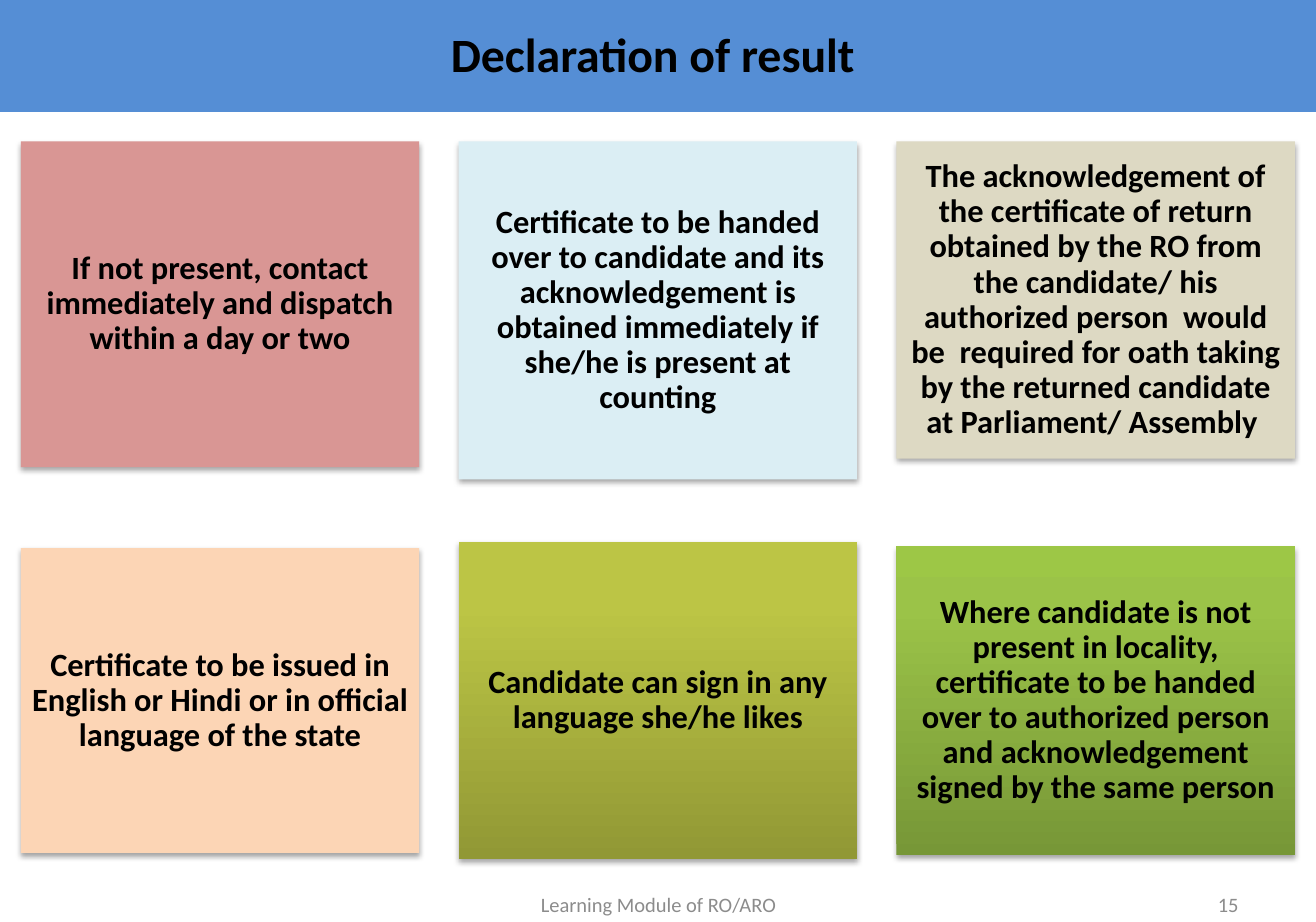
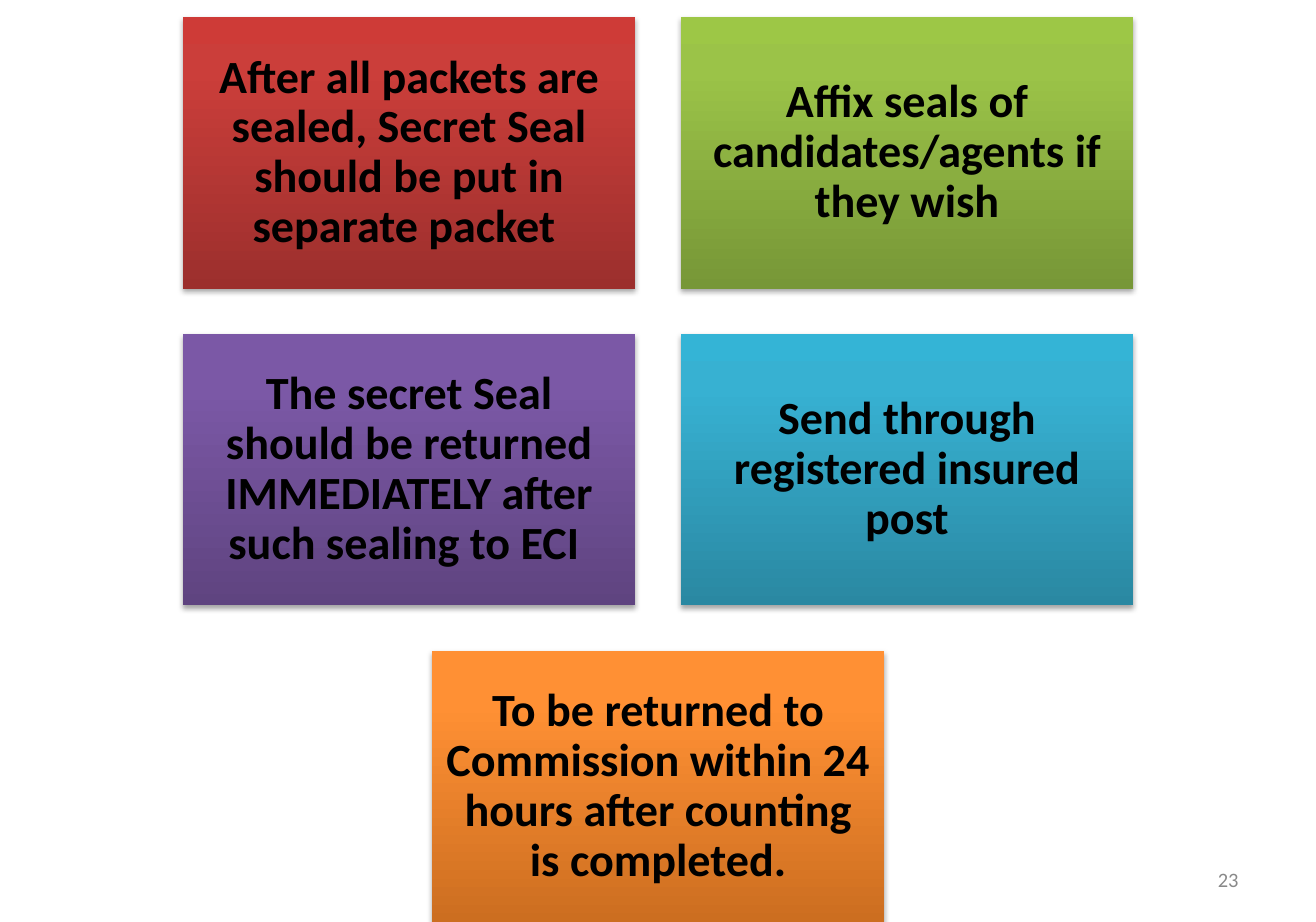
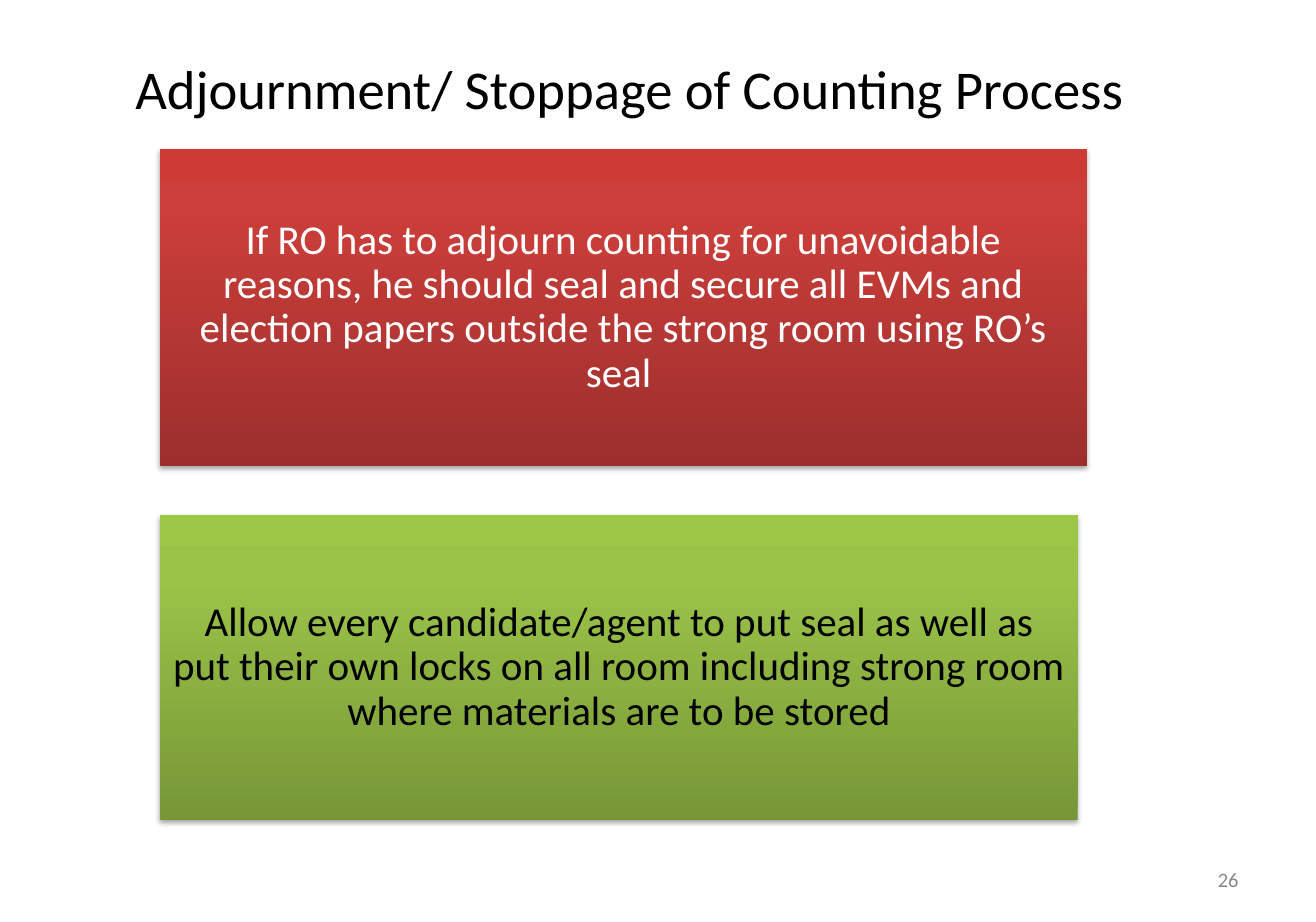
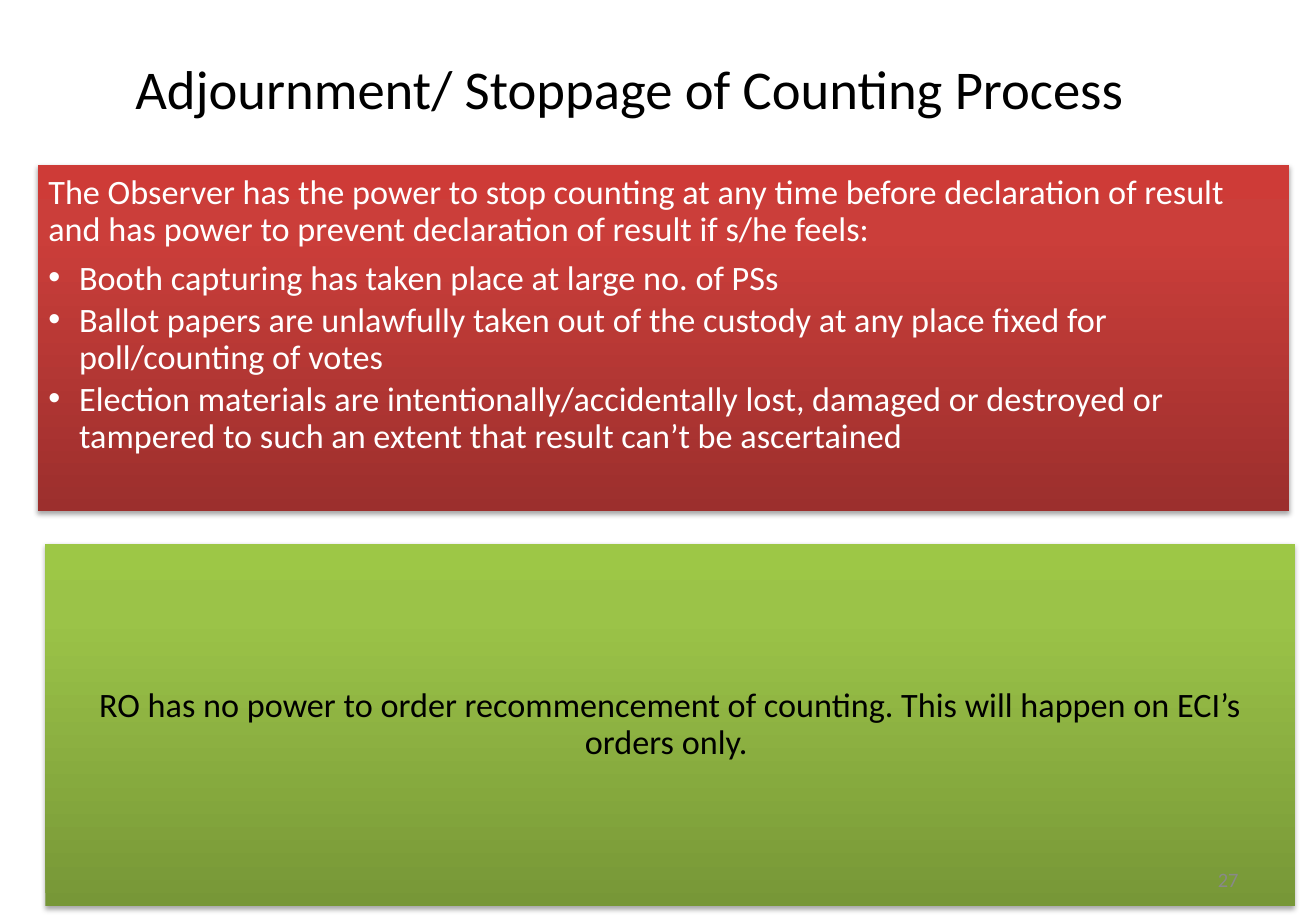
from copy import deepcopy

from lxml.etree import SubElement
from pptx import Presentation
from pptx.dml.color import RGBColor
from pptx.enum.shapes import MSO_SHAPE
from pptx.enum.text import MSO_ANCHOR, MSO_AUTO_SIZE, PP_ALIGN
from pptx.oxml.ns import qn
from pptx.util import Pt

WIDTH, HEIGHT = 770.4, 540
FONT = "Calibri"
COLOURS = {
    "black": "000000", "white": "FFFFFF", "band": "558ED5",
    "footer": "8C8C8C", "number": "898989",
    "pink": "D99694", "ice": "DBEEF4", "sand": "DDD9C3", "peach": "FCD5B5",
}
# Gradient colours from bottom to top
GRADIENTS = {
    "olive": ("919835", "BCC545", "BFC843"),
    "green": ("779737", "9BC348", "9DC746"),
    "red": ("9C2F2D", "CB3E3A", "CE3B37"),
    "purple": ("5F4480", "7B58A6", "7C57A8"),
    "blue": ("2A88A2", "37B1D2", "34B4D6"),
    "orange": ("CC6E20", "FF9034", "FF9136"),
}
STOPS = (0, 0.8, 1)

# Fill, height, text
RESULT_ROWS = [
    [("pink", 190.8, "If not present, contact immediately and dispatch within a day or two"),
     ("ice", 198, "Certificate to be handed over to candidate and its acknowledgement is "
                  "obtained immediately if she/he is present at counting"),
     ("sand", 185.8, "The acknowledgement of the certificate of return obtained by the RO "
                     "from the candidate/ his authorized person  would be  required for oath "
                     "taking by the returned candidate at Parliament/ Assembly ")],
    [("peach", 178.6, "Certificate to be issued in English or Hindi or in official language "
                      "of the state"),
     ("olive", 185.8, "Candidate can sign in any language she/he likes"),
     ("green", 180.7, "Where candidate is not present in locality, certificate to be handed "
                      "over to authorized person and acknowledgement signed by the same person")],
]
SEAL_ROWS = [
    [("red", "After all packets are sealed, Secret Seal should be put in separate packet "),
     ("green", "Affix seals of candidates/agents if they wish")],
    [("purple", "The secret Seal should be returned IMMEDIATELY after such sealing to ECI "),
     ("blue", "Send through registered insured post")],
    [("orange", "To be returned to Commission within 24 hours after counting is completed.")],
]
ADJOURN_TITLE = "Adjournment/ Stoppage of Counting Process"
ADJOURN = ("If RO has to adjourn counting for unavoidable reasons, he should seal and secure "
           "all EVMs and election papers outside the strong room using RO’s seal ")
LOCKS = ("Allow every candidate/agent to put seal as well as put their own locks on all room "
         "including strong room where materials are to be stored")
OBSERVER = [
    "The Observer has the power to stop counting at any time before declaration of result "
    "and has power to prevent declaration of result if s/he feels:",
    "Booth capturing has taken place at large no. of PSs",
    "Ballot papers are unlawfully taken out of the custody at any place fixed for "
    "poll/counting of votes",
    "Election materials are intentionally/accidentally lost, damaged or destroyed or "
    "tampered to such an extent that result can’t be ascertained",
]
RECOMMENCE = ("RO has no power to order recommencement of counting. This will happen on "
              "ECI’s orders only. ")


def rgb(name):
    return RGBColor.from_string(COLOURS[name])


def place(sp, left, top, width, height):
    sp.left, sp.top, sp.width, sp.height = Pt(left), Pt(top), Pt(width), Pt(height)


def write(sp, lines, size, colour="black", bold=False, align=PP_ALIGN.CENTER,
          anchor=MSO_ANCHOR.MIDDLE):
    tf = sp.text_frame
    tf.text = "\n".join(lines)
    tf.word_wrap = True
    tf.auto_size = MSO_AUTO_SIZE.NONE
    tf.vertical_anchor = anchor
    for p in tf.paragraphs:
        p.alignment = align
        p.font.name, p.font.size, p.font.bold = FONT, Pt(size), bold
        p.font.color.rgb = rgb(colour)
    return tf


def paint(sp, fill):
    """Solid or gradient fill, no outline, soft shadow below."""
    if fill in GRADIENTS:
        sp.fill.gradient()
        sp.fill.gradient_angle = 90
        stops = sp._element.spPr.find(".//" + qn("a:gsLst"))
        stops.append(deepcopy(stops[-1]))
        for stop, position, colour in zip(sp.fill.gradient_stops, STOPS, GRADIENTS[fill]):
            stop.position = position
            stop.color.rgb = RGBColor.from_string(colour)
    else:
        sp.fill.solid()
        sp.fill.fore_color.rgb = rgb(fill)
    sp.line.fill.background()
    sp.shadow.inherit = False
    effects = sp._element.spPr.find(qn("a:effectLst"))
    shadow = SubElement(effects, qn("a:outerShdw"), blurRad=str(Pt(3.1)), dist=str(Pt(1.8)),
                        dir="5400000", rotWithShape="0")
    black = SubElement(shadow, qn("a:srgbClr"), val=COLOURS["black"])
    SubElement(black, qn("a:alpha"), val="35000")


def write_card(sp, lines, size, **style):
    tf = write(sp, lines, size, **style)
    tf.margin_left = tf.margin_right = tf.margin_top = tf.margin_bottom = Pt(size * 0.3)
    for p in tf.paragraphs:
        p.line_spacing = 0.9


def add_card(slide, box, fill, text, size, **style):
    sp = slide.shapes.add_shape(MSO_SHAPE.RECTANGLE, *map(Pt, box))
    paint(sp, fill)
    write_card(sp, [text], size, **style)


def add_small_text(slide, text, left, top, width, colour, align):
    sp = slide.shapes.add_textbox(Pt(left), Pt(top), Pt(width), Pt(28.8))
    write(sp, [text], 12, colour, align=align)


def add_number(slide, number, top=500.4, colour="number"):
    add_small_text(slide, str(number), 552.2, top, 180, colour, PP_ALIGN.RIGHT)


def add_adjourn_title(slide):
    title = slide.shapes.title
    place(title, 72, 28.8, 600, 46)
    write(title, [ADJOURN_TITLE], 32, align=PP_ALIGN.LEFT, anchor=MSO_ANCHOR.TOP)


def build_result(prs):
    slide = prs.slides.add_slide(prs.slide_layouts[5])
    title = slide.shapes.title
    place(title, 0, -2.9, WIDTH, 68.4)
    title.fill.solid()
    title.fill.fore_color.rgb = rgb("band")
    write(title, ["Declaration of result "], 28, bold=True)

    width, pitch, first_top, second_middle = 233.2, 256.3, 82.8, 410.3
    for row, cards in enumerate(RESULT_ROWS):
        for col, (fill, height, text) in enumerate(cards):
            top = second_middle - height / 2 if row else first_top
            add_card(slide, (12.2 + col * pitch, top, width, height), fill, text, 19, bold=True)
    add_small_text(slide, "Learning Module of RO/ARO", 263.5, 515.5, 244, "footer",
                   PP_ALIGN.CENTER)
    add_number(slide, 15, 515.5, "footer")


def build_seal(prs):
    slide = prs.slides.add_slide(prs.slide_layouts[6])
    width, height, gap = 265, 159, 26.5
    for row, cards in enumerate(SEAL_ROWS):
        left = (WIDTH - len(cards) * (width + gap) + gap) / 2
        for col, (fill, text) in enumerate(cards):
            box = (left + col * (width + gap), 10 + row * (height + gap), width, height)
            add_card(slide, box, fill, text, 27, bold=True)
    add_number(slide, 23)


def build_adjournment(prs):
    slide = prs.slides.add_slide(prs.slide_layouts[5])
    add_adjourn_title(slide)
    add_card(slide, (93.4, 87.1, 542.9, 185.8), "red", ADJOURN, 24, colour="white")
    add_card(slide, (93.8, 301.7, 537.1, 178.6), "green", LOCKS, 24)
    add_number(slide, 26)


def build_observer(prs):
    slide = prs.slides.add_slide(prs.slide_layouts[1])
    add_adjourn_title(slide)
    body = slide.placeholders[1]
    place(body, 22.3, 96.5, 732.2, 203)
    paint(body, "red")
    write_card(body, OBSERVER, 20, colour="white", align=PP_ALIGN.LEFT, anchor=MSO_ANCHOR.TOP)
    for i, p in enumerate(body.text_frame.paragraphs):
        p.space_before, p.space_after = Pt(0), Pt(3 if i else 7)
        indent = Pt(18 if i else 0)
        pPr = p._p.get_or_add_pPr()
        pPr.set("marL", str(indent))
        pPr.set("indent", str(-indent))
        if i == 0:
            pPr.find(qn("a:spcAft")).addnext(pPr.makeelement(qn("a:buNone")))
    add_card(slide, (26.6, 318.4, 731.5, 212.4), "green", RECOMMENCE, 20)
    add_number(slide, 27)


def main():
    prs = Presentation()
    prs.slide_width, prs.slide_height = Pt(WIDTH), Pt(HEIGHT)
    for build in (build_result, build_seal, build_adjournment, build_observer):
        build(prs)
    prs.save("out.pptx")


if __name__ == "__main__":
    main()
